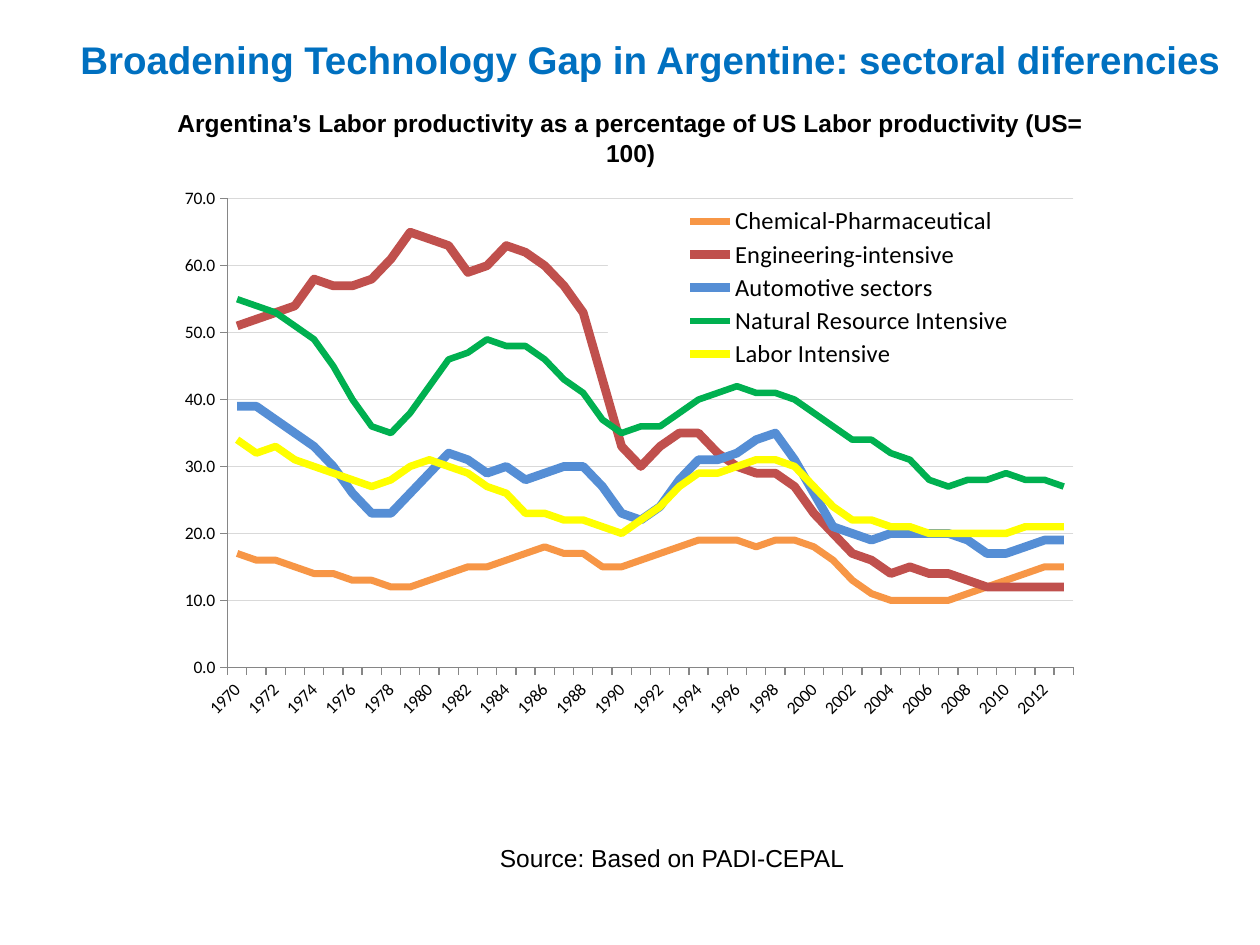
from lxml import etree
from pptx import Presentation
from pptx.chart.data import CategoryChartData
from pptx.dml.color import RGBColor
from pptx.enum.chart import XL_CHART_TYPE as CT, XL_LEGEND_POSITION as LP, XL_TICK_MARK as TM
from pptx.enum.text import MSO_AUTO_SIZE as AS, PP_ALIGN as AL
from pptx.oxml import parse_xml
from pptx.oxml.ns import nsdecls, qn
from pptx.util import Inches, Pt

COLORS = {
    "title": "0070C0", "text": "000000", "grid": "D9D9D9", "axis": "868686",
    "legend": "FFFFFF", "chemical": "F79646", "engineering": "C0504D",
    "automotive": "558ED5", "natural": "00B050", "labor": "FFFF00",
}
YEARS = range(1970, 2014)

# Name, colour, line width, yearly values
SERIES = [
    ("Chemical-Pharmaceutical", "chemical", 4,
     [17, 16, 16, 15, 14, 14, 13, 13, 12, 12, 13, 14, 15, 15, 16, 17, 18, 17, 17, 15, 15, 16,
      17, 18, 19, 19, 19, 18, 19, 19, 18, 16, 13, 11, 10, 10, 10, 10, 11, 12, 13, 14, 15, 15]),
    ("Engineering-intensive", "engineering", 5,
     [51, 52, 53, 54, 58, 57, 57, 58, 61, 65, 64, 63, 59, 60, 63, 62, 60, 57, 53, 43, 33, 30,
      33, 35, 35, 32, 30, 29, 29, 27, 23, 20, 17, 16, 14, 15, 14, 14, 13, 12, 12, 12, 12, 12]),
    ("Automotive sectors", "automotive", 5,
     [39, 39, 37, 35, 33, 30, 26, 23, 23, 26, 29, 32, 31, 29, 30, 28, 29, 30, 30, 27, 23, 22,
      24, 28, 31, 31, 32, 34, 35, 31, 26, 21, 20, 19, 20, 20, 20, 20, 19, 17, 17, 18, 19, 19]),
    ("Natural Resource Intensive", "natural", 3.75,
     [55, 54, 53, 51, 49, 45, 40, 36, 35, 38, 42, 46, 47, 49, 48, 48, 46, 43, 41, 37, 35, 36,
      36, 38, 40, 41, 42, 41, 41, 40, 38, 36, 34, 34, 32, 31, 28, 27, 28, 28, 29, 28, 28, 27]),
    ("Labor Intensive", "labor", 4.25,
     [34, 32, 33, 31, 30, 29, 28, 27, 28, 30, 31, 30, 29, 27, 26, 23, 23, 22, 22, 21, 20, 22,
      24, 27, 29, 29, 30, 31, 31, 30, 27, 24, 22, 22, 21, 21, 20, 20, 20, 20, 20, 21, 21, 21]),
]


def rgb(name):
    return RGBColor.from_string(COLORS[name])


def add_text(slide, box, text, size, color="text", bold=False, align=AL.CENTER, wrap=True):
    sp = slide.shapes.add_textbox(*map(Inches, box))
    tf = sp.text_frame
    tf.word_wrap = wrap
    tf.auto_size = AS.SHAPE_TO_FIT_TEXT
    p = tf.paragraphs[0]
    p.text, p.alignment = text, align
    p.font.name, p.font.size, p.font.bold = "Arial", Pt(size), bold
    p.font.color.rgb = rgb(color)


def manual_layout(box, inner=False):
    """Layout element for a box given in fractions of the chart."""
    target = '<c:layoutTarget val="inner"/>' if inner else ""
    modes = '<c:xMode val="edge"/><c:yMode val="edge"/>'
    sides = "".join(f'<c:{k} val="{v}"/>' for k, v in zip("xywh", box))
    return parse_xml(f'<c:layout {nsdecls("c")}><c:manualLayout>{target}{modes}{sides}'
                     "</c:manualLayout></c:layout>")


def set_layout(parent, layout, index):
    for old in parent.findall(qn("c:layout")):
        parent.remove(old)
    parent.insert(index, layout)


def style_axes(chart):
    cat, val = chart.category_axis, chart.value_axis
    for axis in (cat, val):
        axis.major_tick_mark, axis.minor_tick_mark = TM.OUTSIDE, TM.NONE
        axis.format.line.color.rgb = rgb("axis")
        axis.format.line.width = Pt(0.75)
    # Every second year, slanted
    cat.tick_labels.font.size = Pt(10)
    cat.tick_labels.font.color.rgb = rgb("text")
    body = cat._element.find(qn("c:txPr")).find(qn("a:bodyPr"))
    body.set("rot", "-2700000")
    body.set("vert", "horz")
    skip = etree.Element(qn("c:tickLblSkip"), val="2")
    cat._element.find(qn("c:noMultiLvlLbl")).addprevious(skip)
    # Value scale
    val.minimum_scale, val.maximum_scale, val.major_unit = 0, 70, 10
    val.tick_labels.number_format = "0.0"
    val.tick_labels.number_format_is_linked = False
    grid = val.major_gridlines.format.line
    grid.color.rgb, grid.width = rgb("grid"), Pt(0.75)


def style_legend(chart, box):
    chart.has_legend = True
    legend = chart.legend
    legend.position, legend.include_in_layout = LP.RIGHT, False
    legend.font.size = Pt(14)
    legend.font.color.rgb = rgb("text")
    set_layout(legend._element, manual_layout(box), 1)
    fill = parse_xml(f'<c:spPr {nsdecls("c", "a")}><a:solidFill><a:srgbClr '
                     f'val="{COLORS["legend"]}"/></a:solidFill></c:spPr>')
    legend._element.find(qn("c:overlay")).addnext(fill)


def add_productivity_chart(slide, box):
    data = CategoryChartData(number_format="0.0")
    data.categories = [str(year) for year in YEARS]
    for name, _, _, values in SERIES:
        data.add_series(name, values)
    chart = slide.shapes.add_chart(CT.LINE, *map(Inches, box), data).chart
    chart.has_title = False
    chart.font.name, chart.font.size = "Calibri", Pt(10)
    chart.font.color.rgb = rgb("text")
    chart.plots[0].vary_by_categories = False
    for s, (_, color, width, _) in zip(chart.plots[0].series, SERIES):
        s.smooth = False
        s.format.line.color.rgb = rgb(color)
        s.format.line.width = Pt(width)
    style_axes(chart)
    style_legend(chart, (0.48, 0.05, 0.51, 0.3))
    plot_area = chart._chartSpace.chart.plotArea
    set_layout(plot_area, manual_layout((0.078, 0.042, 0.894, 0.832), inner=True), 0)


def main():
    prs = Presentation()
    prs.slide_width, prs.slide_height = Inches(10), Inches(7.5)
    slide = prs.slides.add_slide(prs.slide_layouts[6])
    # Headings
    add_text(slide, (0.54, 0.24, 9.46, 0.47),
             "Broadening Technology Gap in Argentine: sectoral diferencies",
             22, "title", bold=True, align=AL.LEFT, wrap=False)
    add_text(slide, (1.11, 0.81, 7.79, 0.34),
             "Argentina’s Labor productivity as a percentage of US Labor productivity (US= 100)",
             14, bold=True)
    # Chart and its source
    add_productivity_chart(slide, (1.22, 1.39, 7.51, 4.47))
    add_text(slide, (3.21, 6.64, 4.25, 0.34), "Source: Based on PADI-CEPAL", 14)
    prs.save("out.pptx")


if __name__ == "__main__":
    main()
